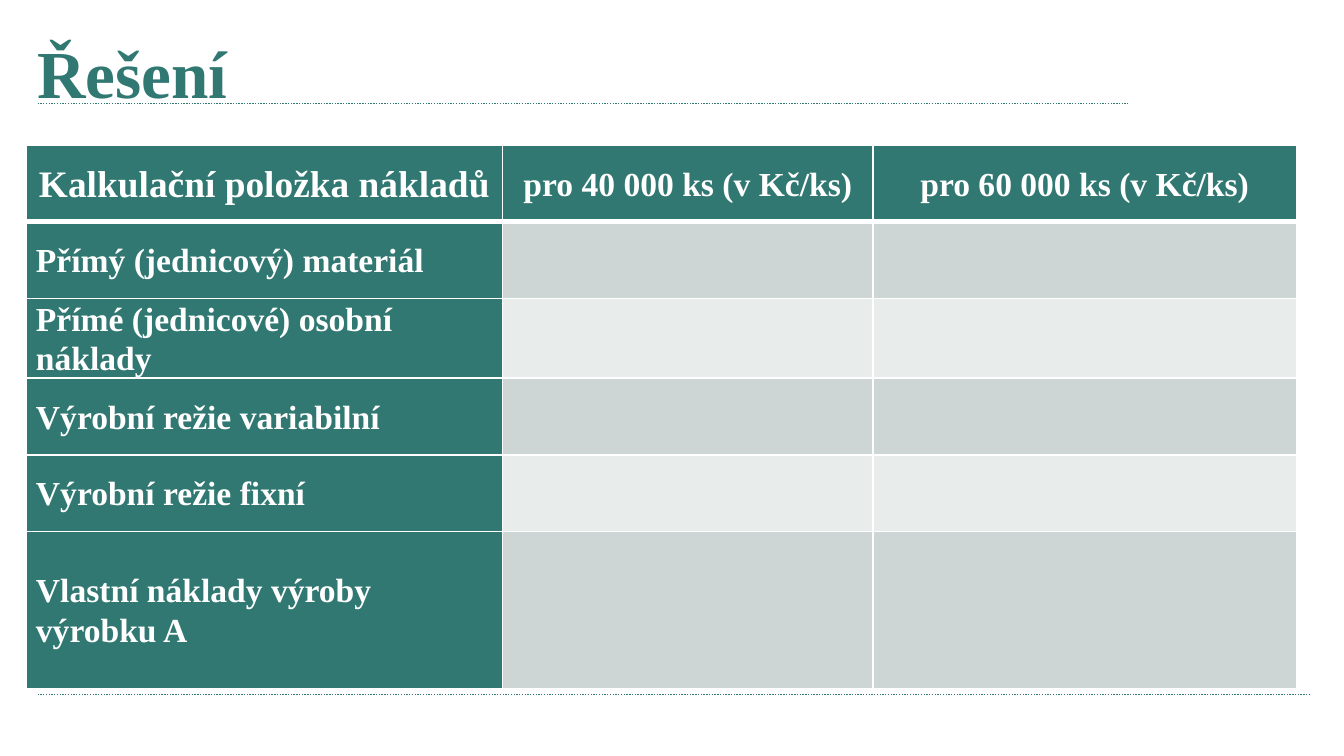
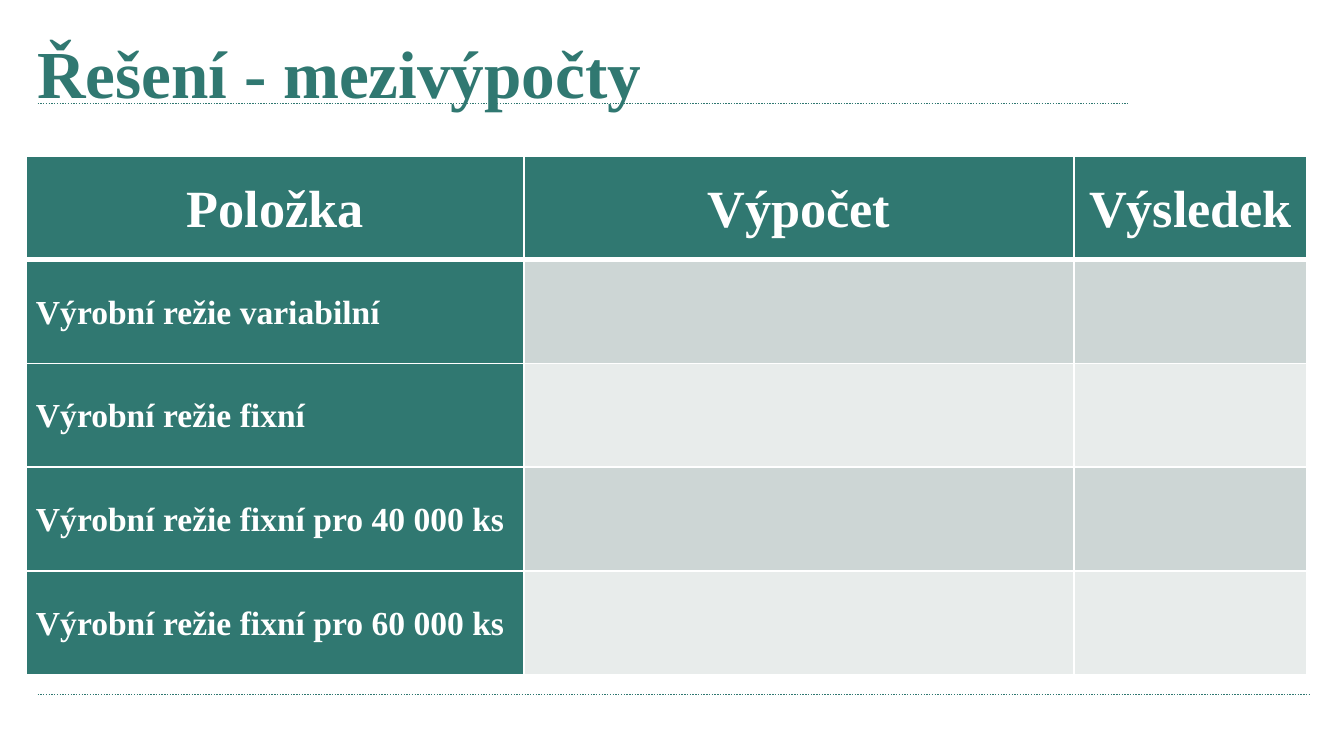
import dataclasses

import pptx
import pptx.dml.color
import pptx.enum.dml
import pptx.enum.shapes
import pptx.enum.text
import pptx.oxml
import pptx.oxml.ns
import pptx.util

Cm = pptx.util.Cm
Pt = pptx.util.Pt
ALIGN = pptx.enum.text.PP_ALIGN
MIDDLE = pptx.enum.text.MSO_ANCHOR.MIDDLE


@dataclasses.dataclass(frozen=True)
class Theme:
    font: str = "Times New Roman"
    green: str = "307871"
    white: str = "FFFFFF"
    bands: tuple = ("CDD6D5", "E8ECEB")
    title_size: int = 36
    body_size: int = 18
    rule_width: float = 0.75
    border: int = 1
    header_border: int = 3


THEME = Theme()
TITLE_ONLY = 5
LEFT = 0.5
RULE_LEFT = 0.71


def rgb(value):
    return pptx.dml.color.RGBColor.from_string(value)


def style_paragraph(p, size, color, align=ALIGN.LEFT):
    p.alignment = align
    p.font.name = THEME.font
    p.font.size = Pt(size)
    p.font.bold = True
    p.font.color.rgb = rgb(color)


def add_rule(slide, right, y):
    """Draw a dotted horizontal line from the common left edge."""
    line = slide.shapes.add_connector(
        pptx.enum.shapes.MSO_CONNECTOR.STRAIGHT,
        Cm(RULE_LEFT), Cm(y), Cm(right), Cm(y))
    line.line.color.rgb = rgb(THEME.green)
    line.line.width = Pt(THEME.rule_width)
    line.line.dash_style = pptx.enum.dml.MSO_LINE.ROUND_DOT
    line._element.spPr.append(pptx.oxml.parse_xml(
        f"<a:effectLst {pptx.oxml.ns.nsdecls('a')}/>"))


def add_titled_slide(prs, title):
    slide = prs.slides.add_slide(prs.slide_layouts[TITLE_ONLY])
    add_rule(slide, 21.31, 1.96)
    add_rule(slide, 24.77, 13.13)
    sp = slide.shapes.title
    sp.left, sp.top, sp.width, sp.height = Cm(LEFT), Cm(0.36), Cm(22.4), Cm(2)
    tf = sp.text_frame
    tf.text = title
    tf.word_wrap = True
    tf.vertical_anchor = MIDDLE
    tf.margin_left = tf.margin_right = Cm(0.2)
    style_paragraph(tf.paragraphs[0], THEME.title_size, THEME.green)
    return slide


def set_borders(cell, top, bottom):
    """Give the cell white borders; must run before the fill is set."""
    tc_pr = cell._tc.get_or_add_tcPr()
    widths = {"L": THEME.border, "R": THEME.border, "T": top, "B": bottom}
    for side, width in widths.items():
        tc_pr.append(pptx.oxml.parse_xml(
            f'<a:ln{side} {pptx.oxml.ns.nsdecls("a")} w="{Pt(width)}">'
            f'<a:solidFill><a:srgbClr val="{THEME.white}"/></a:solidFill>'
            f'</a:ln{side}>'))


def format_cell(cell, text, size, fill, align):
    cell.text = text
    cell.vertical_anchor = MIDDLE
    cell.margin_left = cell.margin_right = Cm(0.18)
    cell.margin_top = cell.margin_bottom = 0
    cell.fill.solid()
    cell.fill.fore_color.rgb = rgb(fill)
    p = cell.text_frame.paragraphs[0]
    p.line_spacing = 1.07
    style_paragraph(p, size, THEME.white, align)


def add_cost_table(slide, top, widths, heights, headers, header_sizes, labels):
    """Add a table with a header row, a label column and empty answer cells."""
    table = slide.shapes.add_table(
        len(heights), len(widths), Cm(LEFT), Cm(top),
        Cm(sum(widths)), Cm(sum(heights))).table
    table.first_col = True
    for column, width in zip(table.columns, widths):
        column.width = Cm(width)
    for row, height in zip(table.rows, heights):
        row.height = Cm(height)

    blanks = [""] * (len(widths) - 1)
    rows = [headers] + [[label, *blanks] for label in labels]
    for i, texts in enumerate(rows):
        is_header = i == 0
        for j, text in enumerate(texts):
            cell = table.cell(i, j)
            set_borders(cell,
                        THEME.header_border if i == 1 else THEME.border,
                        THEME.header_border if is_header else THEME.border)
            format_cell(
                cell, text,
                header_sizes[j] if is_header else THEME.body_size,
                THEME.green if is_header or j == 0 else THEME.bands[(i - 1) % 2],
                ALIGN.CENTER if is_header else ALIGN.LEFT)


def main():
    prs = pptx.Presentation()
    prs.slide_width, prs.slide_height = Cm(25.4), Cm(14.29)

    slide = add_titled_slide(prs, "Řešení")
    add_cost_table(
        slide, 2.74, [9, 7, 8], [1.45] * 5 + [2.97],
        ["Kalkulační položka nákladů",
         "pro 40 000 ks (v Kč/ks)",
         "pro 60 000 ks (v Kč/ks)"],
        [20, 18, 18],
        ["Přímý (jednicový) materiál",
         "Přímé (jednicové) osobní náklady",
         "Výrobní režie variabilní",
         "Výrobní režie fixní",
         "Vlastní náklady výroby výrobku A"])

    slide = add_titled_slide(prs, "Řešení - mezivýpočty")
    add_cost_table(
        slide, 2.95, [9.4, 10.4, 4.4], [1.96] * 5,
        ["Položka", "Výpočet", "Výsledek"],
        [28] * 3,
        ["Výrobní režie variabilní",
         "Výrobní režie fixní",
         "Výrobní režie fixní pro 40 000 ks",
         "Výrobní režie fixní pro 60 000 ks"])

    prs.save("out.pptx")


if __name__ == "__main__":
    main()
